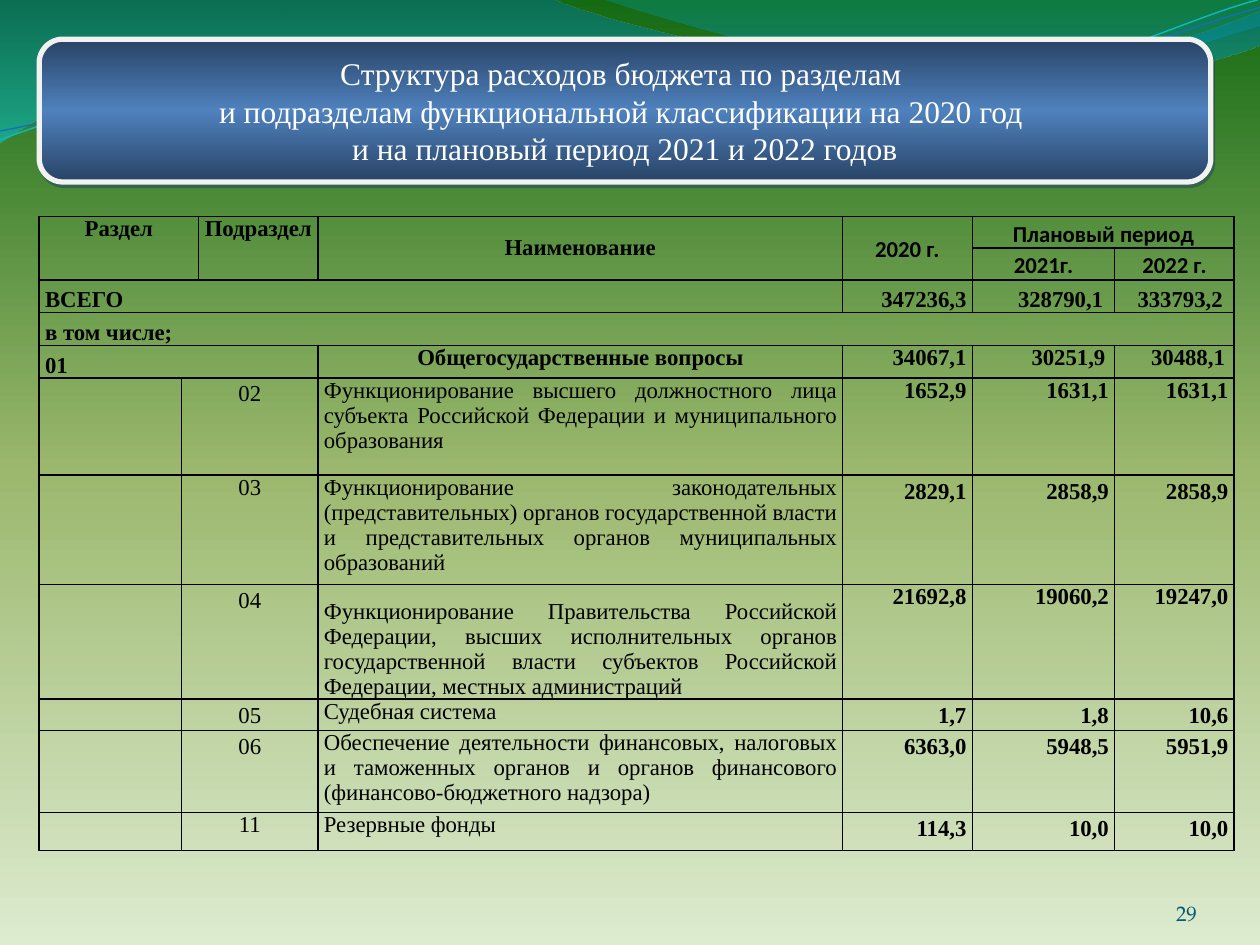
from lxml import etree
from pptx import Presentation
from pptx.dml.color import RGBColor
from pptx.enum import shapes, text
from pptx.oxml import parse_xml
from pptx.oxml.ns import nsdecls, qn
from pptx.util import Cm, Pt

# Content
COLORS = {"black": "000000", "white": "FFFFFF", "rim": "F2F2F2", "shade": "243F60",
          "number": "045D75", "cyan": "0AB8BF", "blue": "0F6FC6"}
SERIF, SANS = "Times New Roman", "Calibri"
BACKDROP = [(0, "DDEBCF", 100), (50, "9CB86E", 100), (100, "156B13", 100)]
BANNER_FILL = [(0, "284365", 100), (50, "4F81BD", 100), (100, "284365", 100)]
TITLE = ["Структура расходов бюджета по разделам ",
         "и подразделам функциональной классификации на 2020 год ",
         "и на плановый период 2021 и 2022 годов"]
PAGE = "29"

# Waves: start point, then points (line) or triples of points (curve), in inches
BANDS = [
    ([(0, 0), [(4.4, 0)], [(4.76, .17), (6.64, .63), (7.58, .63)],
      [(8.53, .63), (9.58, .26), (10, .09)], [(10, .36)],
      [(9.83, .44), (8.7, .76), (7.46, .75)], [(6.22, .75), (3.82, .28), (2.57, .34)],
      [(1.29, .35), (.46, .83), (0, 1.13)]],
     [(0, "0074A1", 45), (100, "00C6CF", 55)]),
    ([(4.79, 0), [(5.09, .11), (6.82, .62), (7.69, .65)],
      [(8.56, .69), (9.61, .32), (10, .21)], [(10, 0)]],
     [(0, "00A1A9", 30), (80, "008BBF", 45)]),
]
STRANDS = [
    ([(0, 1.11), [(.48, .93), (1.58, .57), (2.77, .52)],
      [(3.95, .47), (5.93, .89), (7.13, .8)], [(8.33, .71), (9.38, .15), (9.98, 0)]],
     "cyan", .85),
    ([(0, 1.04), [(.47, .96), (1.64, .61), (2.83, .56)],
      [(4.03, .51), (5.97, .83), (7.17, .75)], [(8.36, .67), (9.41, .21), (10, .06)]],
     "blue", .75),
]

# Table: column widths and row heights in cm
COLS = [2.87, .28, 2.41, 10.57, 2.62, 2.87, 2.41]
ROWS = [.64, .64, .66, .66, .66, 1.96, 1.96, 2.31, .41, 1.42, .76]
TABLE_HEIGHT = 12.75
LOOSE = dict(spacing=1.15, after=10)
TIGHT = {}
HEAD = dict(align="CENTER", bold=True, before=12, after=3)
YEAR = dict(LOOSE, align="CENTER", bold=True, font=SANS)
TOTAL = dict(bold=True, anchor="BOTTOM")
AMOUNT = dict(align="RIGHT", bold=True)
# row, column, rows spanned, columns spanned, text, format
CELLS = [
    (0, 0, 2, 2, "Раздел", HEAD),
    (0, 2, 2, 1, "Подраздел", HEAD),
    (0, 3, 2, 1, "Наименование", dict(HEAD, anchor="MIDDLE")),
    (0, 4, 2, 1, "2020 г.", dict(YEAR, anchor="MIDDLE")),
    (0, 5, 1, 2, "Плановый период", YEAR),
    (1, 5, 1, 1, "2021г.", YEAR),
    (1, 6, 1, 1, "2022 г.", YEAR),
    (2, 0, 1, 4, "ВСЕГО", TOTAL),
    (3, 0, 1, 7, "в том числе;", TOTAL),
    (4, 0, 1, 3, "01", TOTAL),
    (4, 3, 1, 1, "Общегосударственные вопросы", dict(align="CENTER", bold=True)),
]
AMOUNTS = {2: (["347236,3", "328790,1 ", "333793,2 "], dict(AMOUNT, anchor="BOTTOM")),
           4: (["34067,1", "30251,9", "30488,1"], AMOUNT)}
WIDE_MARGIN = [(4, 5), (4, 6)]
# code, code format, name, name format, amounts, amount format
SUBSECTIONS = [
    ("02", LOOSE, "Функционирование высшего должностного лица субъекта Российской "
     "Федерации и муниципального образования", TIGHT, ["1652,9", "1631,1", "1631,1"], TIGHT),
    ("03", TIGHT, "Функционирование законодательных (представительных) органов "
     "государственной власти и представительных органов муниципальных образований",
     TIGHT, ["2829,1", "2858,9", "2858,9"], LOOSE),
    ("04", LOOSE, "Функционирование Правительства Российской Федерации, высших "
     "исполнительных органов государственной власти субъектов Российской Федерации, "
     "местных администраций", dict(anchor="BOTTOM"), ["21692,8", "19060,2", "19247,0"], TIGHT),
    ("05", LOOSE, "Судебная система", dict(align="LEFT"), ["1,7", "1,8", "10,6"], LOOSE),
    ("06", LOOSE, "Обеспечение деятельности финансовых, налоговых и таможенных органов и "
     "органов финансового (финансово-бюджетного надзора)", TIGHT,
     ["6363,0", "5948,5", "5951,9"], LOOSE),
    ("11", TIGHT, "Резервные фонды", TIGHT, ["114,3", "10,0", "10,0"], LOOSE),
]
for row, (code, code_fmt, name, name_fmt, sums, sum_fmt) in enumerate(SUBSECTIONS, 5):
    CELLS.append((row, 1, 1, 2, code, {"align": "CENTER", **code_fmt}))
    CELLS.append((row, 3, 1, 1, name, {"align": "JUSTIFY", **name_fmt}))
    AMOUNTS[row] = (sums, {**AMOUNT, **sum_fmt})
for row, (sums, fmt) in AMOUNTS.items():
    CELLS += [(row, col, 1, 1, value, fmt) for col, value in enumerate(sums, 4)]


def rgb(name):
    return RGBColor.from_string(COLORS[name])


def write(tf, lines, align="LEFT", font=SERIF, size=13, color="black", bold=False,
          spacing=None, before=0, after=0):
    tf.word_wrap = True
    for i, line in enumerate(lines):
        p = tf.add_paragraph() if i else tf.paragraphs[0]
        p.alignment = getattr(text.PP_ALIGN, align)
        p.space_before, p.space_after = Pt(before), Pt(after)
        if spacing:
            p.line_spacing = spacing
        r = p.add_run()
        r.text = line
        r.font.name, r.font.size, r.font.bold = font, Pt(size), bold
        r.font.color.rgb = rgb(color)


def gradient(fill, parent, stops, angle):
    """Swap the solid fill inside parent for a linear gradient."""
    fill.solid()
    solid = parent.find(qn("a:solidFill"))
    gs = "".join(f'<a:gs pos="{pos * 1000}"><a:srgbClr val="{c}">'
                 f'<a:alpha val="{alpha * 1000}"/></a:srgbClr></a:gs>'
                 for pos, c, alpha in stops)
    parent.replace(solid, parse_xml(
        f'<a:gradFill {nsdecls("a")} rotWithShape="1"><a:gsLst>{gs}</a:gsLst>'
        f'<a:lin ang="{angle * 60000}" scaled="0"/></a:gradFill>'))


def wave(slide, route, close):
    """Freeform through the nodes, with curved pieces turned into Bezier segments."""
    nodes = [route[0]] + [piece[-1] for piece in route[1:]]
    emu = [(Cm(x * 2.54), Cm(y * 2.54)) for x, y in nodes]
    builder = slide.shapes.build_freeform(*emu[0])
    builder.add_line_segments(emu[1:], close=close)
    sp = builder.convert_to_shape()
    sp.shadow.inherit = False
    segments = list(sp._element.spPr.iter(qn("a:lnTo")))
    for segment, piece in zip(segments, route[1:]):
        if len(piece) == 3:
            curve = etree.Element(qn("a:cubicBezTo"))
            for x, y in piece:
                etree.SubElement(curve, qn("a:pt"), x=str(Cm(x * 2.54) - sp.left),
                                 y=str(Cm(y * 2.54) - sp.top))
            segment.getparent().replace(segment, curve)
    return sp


prs = Presentation()
prs.slide_width, prs.slide_height = Cm(25.4), Cm(19.05)
slide = prs.slides.add_slide(prs.slide_layouts[6])

# Background and waves
bg_fill = slide.background.fill
bg_fill.solid()
gradient(bg_fill, slide._element.find(".//" + qn("p:bgPr")), BACKDROP, 270)
for route, stops in BANDS:
    sp = wave(slide, route, True)
    gradient(sp.fill, sp._element.spPr, stops, 90)
    sp.line.fill.background()
for route, color, width in STRANDS:
    sp = wave(slide, route, False)
    sp.fill.background()
    sp.line.color.rgb, sp.line.width = rgb(color), Pt(width)

# Page number
tf = slide.shapes.add_textbox(Cm(22.02), Cm(17.65), Cm(2.11), Cm(1.02)).text_frame
tf.margin_left = tf.margin_right = tf.margin_top = tf.margin_bottom = 0
tf.vertical_anchor = text.MSO_ANCHOR.BOTTOM
write(tf, [PAGE], align="RIGHT", font="TeX Gyre Pagella", size=12, color="number")

# Title banner
sp = slide.shapes.add_shape(shapes.MSO_SHAPE.FLOWCHART_ALTERNATE_PROCESS,
                            Cm(.79), Cm(.79), Cm(23.62), Cm(2.88))
gradient(sp.fill, sp._element.spPr, BANNER_FILL, 90)
sp.line.color.rgb, sp.line.width = rgb("rim"), Pt(3)
sp.shadow.inherit = False
shadow = etree.SubElement(sp._element.spPr.find(qn("a:effectLst")), qn("a:outerShdw"),
                          dist=str(Pt(2.2)), dir=str(63 * 60000), algn="ctr", rotWithShape="0")
tint = etree.SubElement(shadow, qn("a:srgbClr"), val=COLORS["shade"])
etree.SubElement(tint, qn("a:alpha"), val="50000")
sp.text_frame.vertical_anchor = text.MSO_ANCHOR.MIDDLE
write(sp.text_frame, TITLE, align="CENTER", size=18, color="white")

# Budget table
frame = slide.shapes.add_table(len(ROWS), len(COLS), Cm(.79), Cm(4.36),
                               Cm(sum(COLS)), Cm(TABLE_HEIGHT))
table = frame.table
table.first_row = table.horz_banding = False
for col, width in zip(table.columns, COLS):
    col.width = Cm(width)
for row, height in zip(table.rows, ROWS):
    row.height = Cm(height)
frame.height = Cm(TABLE_HEIGHT)
for cell in table.iter_cells():
    cell.margin_left = cell.margin_right = Cm(.12)
    cell.margin_top = cell.margin_bottom = 0
    cell.fill.background()
    for i, side in enumerate(("lnL", "lnR", "lnT", "lnB")):
        cell._tc.tcPr.insert(i, parse_xml(
            f'<a:{side} {nsdecls("a")} w="{Pt(1)}"><a:solidFill>'
            f'<a:srgbClr val="{COLORS["black"]}"/></a:solidFill></a:{side}>'))
for r, c, down, across, value, fmt in CELLS:
    cell = table.cell(r, c)
    if down * across > 1:
        cell.merge(table.cell(r + down - 1, c + across - 1))
    if (r, c) in WIDE_MARGIN:
        cell.margin_left = cell.margin_right = Cm(.19)
    fmt = dict(fmt)
    cell.vertical_anchor = getattr(text.MSO_ANCHOR, fmt.pop("anchor", "TOP"))
    write(cell.text_frame, [value], **fmt)
for cell in table.iter_cells():
    if not cell.text_frame.text:
        etree.SubElement(cell.text_frame.paragraphs[0]._p, qn("a:endParaRPr"), sz="1000")

prs.save("out.pptx")
